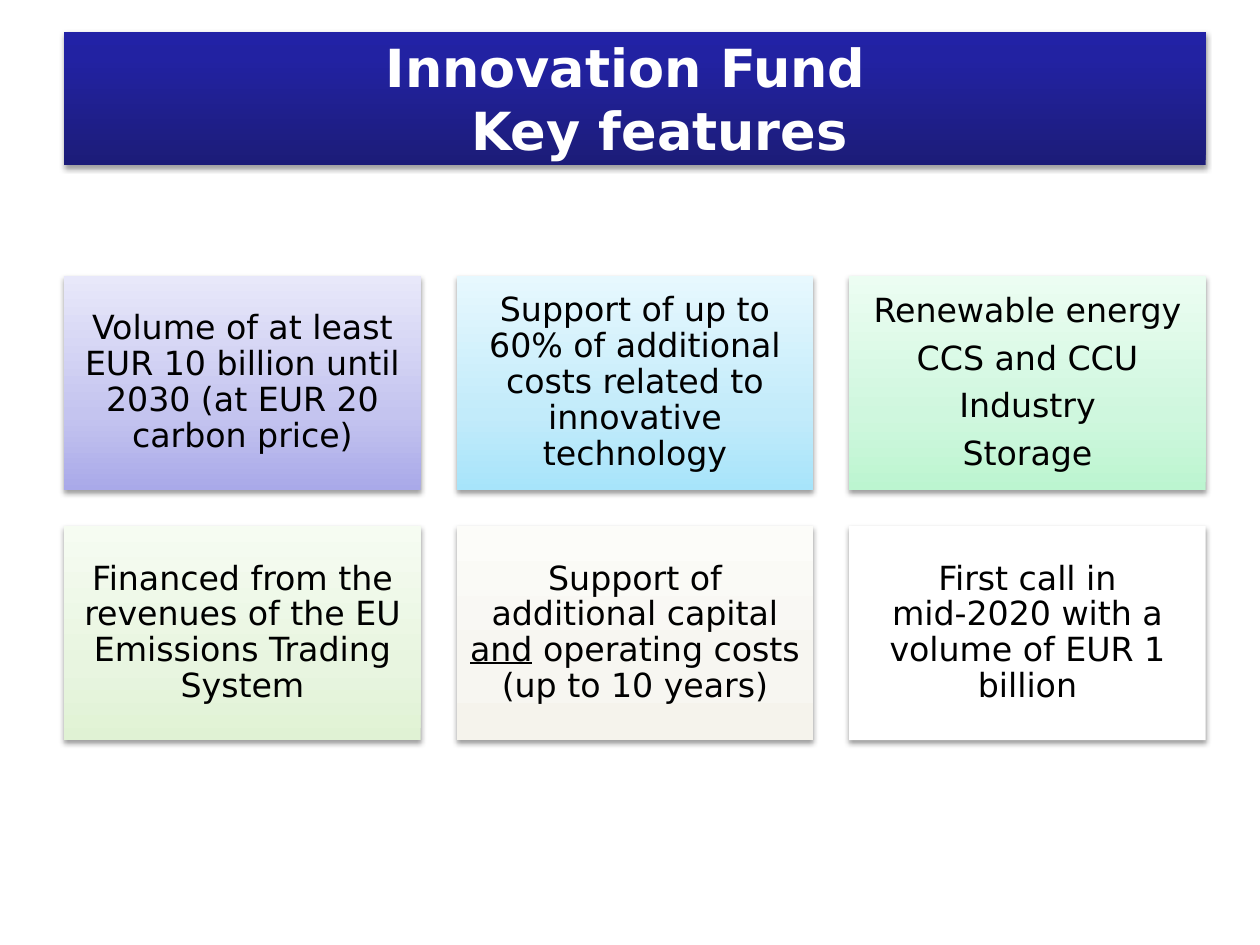
from copy import deepcopy
from dataclasses import dataclass

from lxml.etree import SubElement
from pptx import Presentation
from pptx.dml.color import RGBColor
from pptx.enum.shapes import MSO_SHAPE
from pptx.enum.text import MSO_ANCHOR, MSO_AUTO_SIZE, PP_ALIGN
from pptx.oxml.ns import qn
from pptx.util import Inches, Pt


@dataclass(frozen=True)
class Theme:
    font: str = "DejaVu Sans"
    title_size: int = 30
    card_size: int = 19
    title_text: str = "FFFFFF"
    card_text: str = "000000"
    shadow: str = "000000"
    title_fill: tuple = ((0, "1C1C78"), (80, "2222A2"), (100, "2222A6"))
    violet: tuple = ((0, "A9A9E9"), (35, "C4C4EF"), (100, "E8E8FA"))
    blue: tuple = ((0, "A7E4FA"), (35, "C2EBFA"), (100, "E7F8FE"))
    mint: tuple = ((0, "BCF5D0"), (35, "CFF7DE"), (100, "ECFDF2"))
    green: tuple = ((0, "E0F2D4"), (35, "E8F5E0"), (100, "F6FCF2"))
    sand: tuple = ((0, "F5F3EC"), (35, "F7F6F1"), (100, "FCFCF9"))
    white: tuple = ((0, "FFFFFF"),)


theme = Theme()


def write(tf, text, *, size, color, bold=False, spacing=1.0, after=0, inset=None):
    """Fill a frame: \\n parts paragraphs, \\v breaks lines, _ marks underlining."""
    tf.word_wrap = True
    tf.auto_size = MSO_AUTO_SIZE.NONE
    tf.vertical_anchor = MSO_ANCHOR.MIDDLE
    if inset is not None:
        tf.margin_left = tf.margin_right = tf.margin_top = tf.margin_bottom = inset
    for n, paragraph in enumerate(text.split("\n")):
        p = tf.add_paragraph() if n else tf.paragraphs[0]
        p.alignment = PP_ALIGN.CENTER
        p.line_spacing = spacing
        p.space_before, p.space_after = Pt(0), Pt(after)
        for m, line in enumerate(paragraph.split("\v")):
            if m:
                p.add_line_break()
            for k, part in enumerate(line.split("_")):
                r = p.add_run()
                r.text = part
                r.font.name = theme.font
                r.font.size = Pt(size)
                r.font.bold = bold
                r.font.underline = k % 2 == 1
                r.font.color.rgb = RGBColor.from_string(color)
        # Line breaks take the format of the text around them
        for br in p._p.findall(qn("a:br")):
            br.append(deepcopy(p.runs[0]._r.rPr))


def paint(s, stops):
    """Fill from bottom to top and add a soft shadow below."""
    s.line.fill.background()
    if len(stops) == 1:
        s.fill.solid()
        s.fill.fore_color.rgb = RGBColor.from_string(stops[0][1])
    else:
        s.fill.gradient()
        s.fill.gradient_angle = 90
        stop_list = s._element.spPr.find(".//" + qn("a:gsLst"))
        for old in list(stop_list):
            stop_list.remove(old)
        for position, color in stops:
            gs = SubElement(stop_list, qn("a:gs"), pos=str(position * 1000))
            SubElement(gs, qn("a:srgbClr"), val=color)
    s.shadow.inherit = False
    effects = s._element.spPr.find(qn("a:effectLst"))
    outer = SubElement(effects, qn("a:outerShdw"), blurRad=str(Pt(3.1)),
                       dist=str(Pt(1.6)), dir="5400000", rotWithShape="0")
    tint = SubElement(outer, qn("a:srgbClr"), val=theme.shadow)
    SubElement(tint, qn("a:alpha"), val="38000")


prs = Presentation()
prs.slide_width, prs.slide_height = Inches(10), Inches(7.5)
slide = prs.slides.add_slide(prs.slide_layouts[5])

# Title band
title = slide.shapes.title
title.left, title.top = Inches(0.51), Inches(0.25)
title.width, title.height = Inches(9.06), Inches(1.06)
paint(title, theme.title_fill)
write(title.text_frame, "Innovation Fund \vKey features",
      size=theme.title_size, color=theme.title_text, bold=True)
hanging = title.text_frame.paragraphs[0]._p.get_or_add_pPr()
hanging.set("marL", str(Inches(0.39)))
hanging.set("indent", str(Inches(-0.39)))

# Feature cards, three to a row
cards = [
    ("Volume of at least EUR 10 billion until 2030 (at EUR 20 carbon price)", theme.violet),
    ("Support of up to 60% of additional costs related to innovative technology", theme.blue),
    ("Renewable energy\nCCS and CCU\nIndustry\nStorage", theme.mint),
    ("Financed from the revenues of the EU Emissions Trading System", theme.green),
    ("Support of additional capital _and_ operating costs (up to 10 years)", theme.sand),
    ("First call in mid-2020 with a volume of EUR 1 billion", theme.white),
]
left, top, width, height, gap = 0.51, 2.19, 2.83, 1.7, 0.285
for i, (text, stops) in enumerate(cards):
    row, col = divmod(i, 3)
    s = slide.shapes.add_shape(
        MSO_SHAPE.RECTANGLE,
        Inches(left + col * (width + gap)), Inches(top + row * (height + gap)),
        Inches(width), Inches(height))
    paint(s, stops)
    write(s.text_frame, text, size=theme.card_size, color=theme.card_text,
          spacing=0.9, after=6.65, inset=Inches(0.08))

prs.save("out.pptx")
